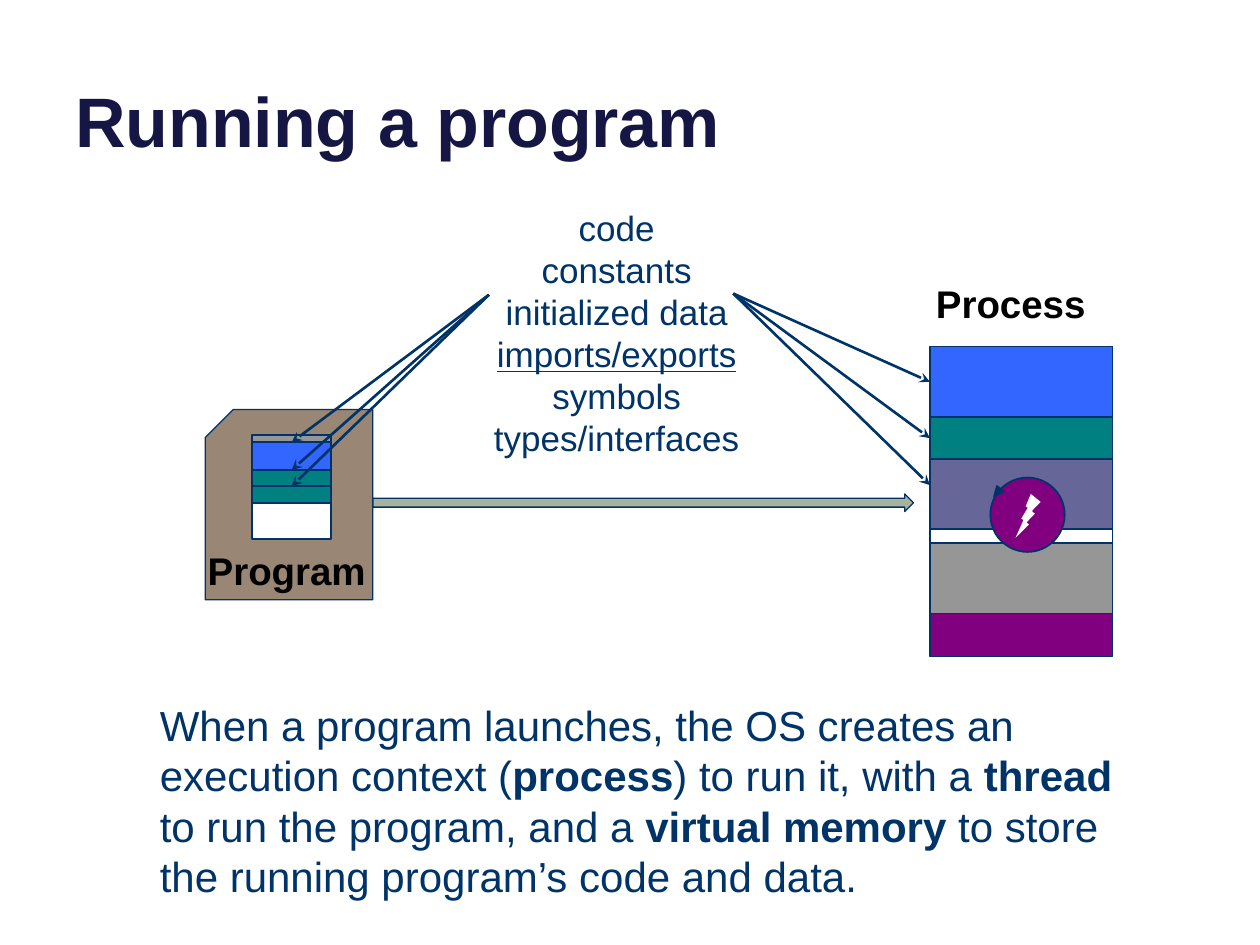
from lxml import etree
from pptx import Presentation
from pptx.dml.color import RGBColor
from pptx.enum import shapes, text
from pptx.oxml import ns
from pptx.util import Inches, Pt

NAVY = RGBColor(0x00, 0x33, 0x67)
INK = RGBColor(0x16, 0x16, 0x45)
BLACK = RGBColor(0x00, 0x00, 0x00)
WHITE = RGBColor(0xFF, 0xFF, 0xFF)
BROWN = RGBColor(0x99, 0x86, 0x74)
SAGE = RGBColor(0xA8, 0xB3, 0x9D)
BLUE = RGBColor(0x33, 0x66, 0xFF)
TEAL = RGBColor(0x00, 0x80, 0x80)
SLATE = RGBColor(0x66, 0x66, 0x99)
GRAY = RGBColor(0x96, 0x96, 0x96)
PURPLE = RGBColor(0x80, 0x00, 0x80)

PRESET = shapes.MSO_SHAPE
TOP, LEFT = 0, 1


def add_text(slide, box, paragraphs, size, color=NAVY, bold=False, wrap=True,
             align=text.PP_ALIGN.LEFT, anchor=text.MSO_ANCHOR.TOP):
    """Each paragraph is a list of (wording, font attributes) runs."""
    frame = slide.shapes.add_textbox(*map(Inches, box)).text_frame
    frame.word_wrap = wrap
    frame.vertical_anchor = anchor
    for index, runs in enumerate(paragraphs):
        paragraph = frame.paragraphs[0] if index == 0 else frame.add_paragraph()
        paragraph.alignment = align
        for wording, emphasis in runs:
            run = paragraph.add_run()
            run.text = wording
            font = run.font
            font.name, font.size, font.bold = "Arial", Pt(size), bold
            font.color.rgb = color
            for attribute, value in emphasis.items():
                setattr(font, attribute, value)


def add_preset(parent, preset, box, fill, line=1, flip=False, rotation=0):
    shape = parent.shapes.add_shape(preset, *map(Inches, box))
    shape.shadow.inherit = False
    shape.fill.solid()
    shape.fill.fore_color.rgb = fill
    if line:
        shape.line.color.rgb = NAVY
        shape.line.width = Pt(line)
    else:
        shape.line.fill.background()
    shape.rotation = rotation
    if flip:
        shape._element.spPr.find(ns.qn("a:xfrm")).set("flipH", "1")
    return shape


def add_pointer(slide, start, end):
    points = map(Inches, (*start, *end))
    pointer = slide.shapes.add_connector(shapes.MSO_CONNECTOR.STRAIGHT, *points)
    pointer.line.color.rgb = NAVY
    pointer.line.width = Pt(1.5)
    etree.SubElement(pointer.line._get_or_add_ln(), ns.qn("a:tailEnd"), type="stealth")
    etree.SubElement(pointer._element.spPr, ns.qn("a:effectLst"))
    return pointer


def add_memory_stack(group, left, top, width, sections):
    """Stack (height, fill) sections downwards and return their shapes."""
    stack = []
    for height, fill in sections:
        stack.append(add_preset(group, PRESET.FLOWCHART_PROCESS,
                                (left, top, width, height), fill))
        top += height
    return stack


def add_program(slide, left, top):
    add_preset(slide, PRESET.SNIP_1_RECTANGLE, (left, top, 1.33, 1.51), BROWN,
               line=0.75, flip=True)
    add_text(slide, (left - 0.08, top + 1.04, 2.01, 0.47), [[("Program", {})]],
             22, BLACK, bold=True)
    return add_memory_stack(
        slide.shapes.add_group_shape(), left + 0.37, top + 0.2, 0.63,
        [(0.06, GRAY), (0.22, BLUE), (0.13, TEAL), (0.13, TEAL), (0.29, WHITE)])


def add_thread(group, left, top):
    add_preset(group, PRESET.OVAL, (left, top, 0.59, 0.59), PURPLE)
    add_preset(group, PRESET.LIGHTNING_BOLT, (left + 0.2, top + 0.13, 0.2, 0.35),
               WHITE, line=0, flip=True)
    add_preset(group, PRESET.ISOSCELES_TRIANGLE, (left + 0.02, top + 0.08, 0.07, 0.08),
               NAVY, rotation=219)


def add_process(slide, left, top):
    add_text(slide, (left - 0.05, top - 0.58, 2.01, 0.47), [[("Process", {})]],
             22, BLACK, bold=True)
    group = slide.shapes.add_group_shape()
    stack = add_memory_stack(
        group, left, top, 1.45,
        [(0.56, BLUE), (0.335, TEAL), (0.555, SLATE), (0.11, WHITE),
         (0.56, GRAY), (0.34, PURPLE)])
    add_thread(group, left + 0.48, top + 1.04)
    return stack


def add_contents(slide, left, top, program, process):
    """List what a program holds, pointing to its sections on both sides."""
    names = ["code", "constants", "initialized data", "imports/exports",
             "symbols", "types/interfaces"]
    add_text(slide, (left, top, 2.17, 2.12),
             [[(name, {"underline": name == "imports/exports"})] for name in names],
             20, wrap=False, align=text.PP_ALIGN.CENTER)
    program_start = (left + 0.07, top + 0.75)
    process_start = (left + 2.01, top + 0.74)
    for section in program[1:4]:
        add_pointer(slide, program_start, (2.31, 3.51)).end_connect(section, TOP)
    for section in process[:2]:
        add_pointer(slide, process_start, (7.38, 3.03)).end_connect(section, LEFT)
    add_pointer(slide, process_start, (7.38, 3.85))


def add_summary(slide, box):
    strong = {"bold": True}
    add_text(slide, box, [[
        ("When a program launches, the OS creates an execution context (", {}),
        ("process", strong),
        (") to run it, with a ", {}),
        ("thread", strong),
        (" to run the program, and a ", {}),
        ("virtual memory ", strong),
        ("to store the running program’s code and data.", {}),
    ]], 24)


def main():
    deck = Presentation()
    deck.slide_width, deck.slide_height = Inches(10), Inches(7.5)
    slide = deck.slides.add_slide(deck.slide_layouts[6])
    add_text(slide, (0.5, -0.37, 9, 1.7), [[("Running a program", {})]], 40, INK,
             bold=True, anchor=text.MSO_ANCHOR.BOTTOM)
    program = add_program(slide, 1.63, 3.25)
    add_preset(slide, PRESET.RIGHT_ARROW, (2.96, 3.92, 4.29, 0.14), SAGE, line=0.75)
    process = add_process(slide, 7.38, 2.75)
    add_contents(slide, 3.81, 1.59, program, process)
    add_summary(slide, (1.17, 5.5, 8, 1.72))
    deck.save("out.pptx")


if __name__ == "__main__":
    main()
